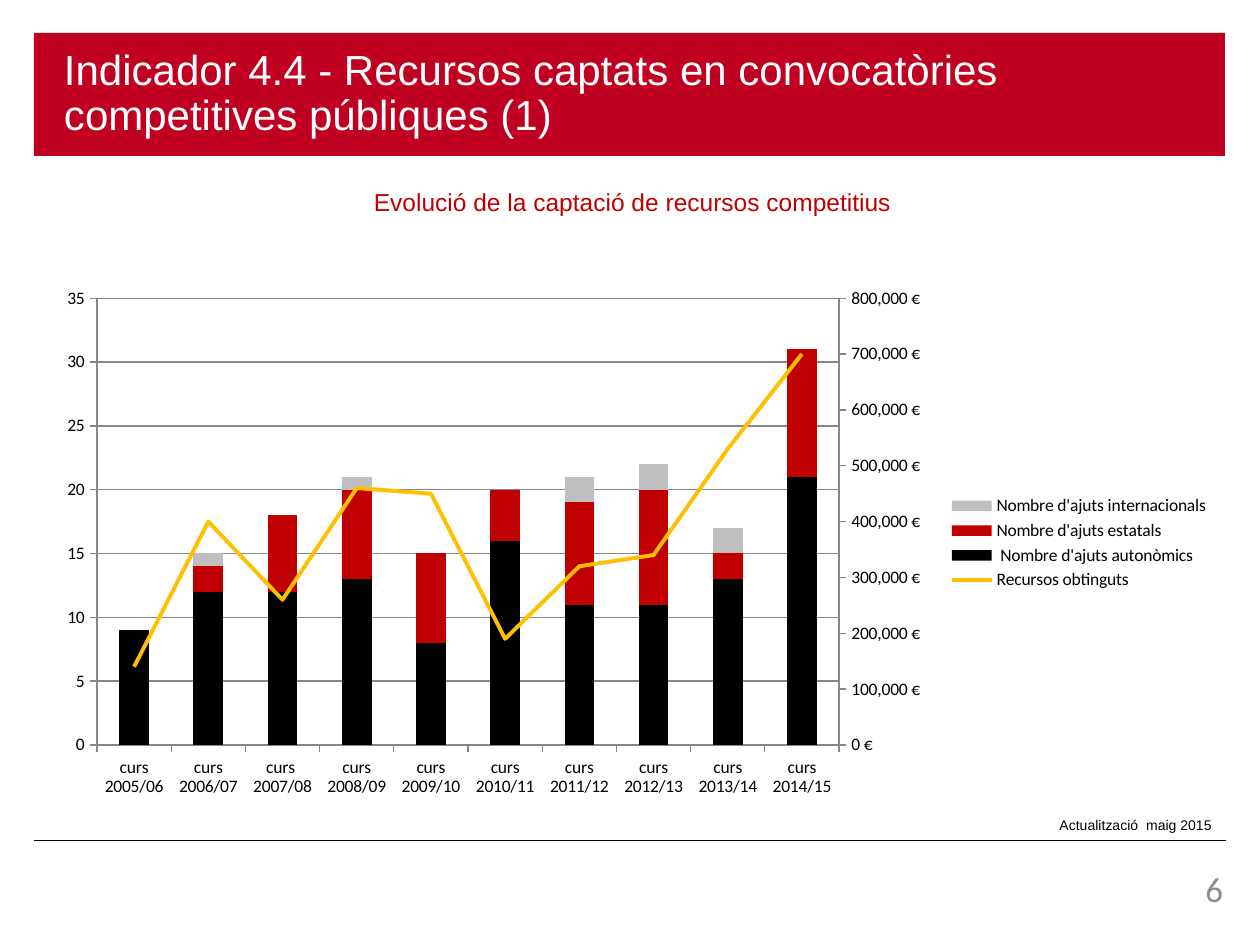
from dataclasses import dataclass

from lxml import etree
from pptx import Presentation
from pptx import util as u
from pptx.chart.data import CategoryChartData
from pptx.dml.color import RGBColor
from pptx.enum import chart as charts, shapes, text
from pptx.oxml import parse_xml
from pptx.oxml.ns import nsdecls, qn

PX = 914400 / 126


@dataclass(frozen=True)
class Theme:
    banner: str = "C00021"
    accent: str = "C00000"
    ink: str = "000000"
    paper: str = "FFFFFF"
    muted: str = "8C8C8C"
    pale: str = "BFBFBF"
    gold: str = "FFC000"
    grid: str = "868686"
    body_font: str = "Arial"
    chart_font: str = "Calibri"
    title_size: int = 24
    subtitle_size: int = 14
    chart_size: int = 10
    note_size: int = 8
    number_size: int = 20


THEME = Theme()

COURSES = ["curs 2005/06", "curs 2006/07", "curs  2007/08", "curs 2008/09", "curs 2009/10",
           "curs 2010/11", "curs 2011/12", "curs 2012/13", "curs 2013/14", "curs 2014/15"]
GRANTS = [
    (" Nombre d'ajuts autonòmics", [9, 12, 12, 13, 8, 16, 11, 11, 13, 21], THEME.ink),
    ("Nombre d'ajuts estatals", [None, 2, 6, 7, 7, 4, 8, 9, 2, 10], THEME.accent),
    ("Nombre d'ajuts internacionals", [None, 1, 0, 1, 0, 0, 2, 2, 2, 0], THEME.pale),
]
FUNDS = ("Recursos obtinguts", [140000, 400000, 260000, 460000, 450000,
                                190000, 320000, 340000, 530000, 700000])

FUNDS_AXES = f"""
<c:plotArea {nsdecls("c", "a")}>
  <c:lineChart>
    <c:grouping val="standard"/><c:varyColors val="0"/>
    <c:marker val="1"/><c:axId val="5001"/><c:axId val="5002"/>
  </c:lineChart>
  <c:valAx>
    <c:axId val="5002"/>
    <c:scaling><c:orientation val="minMax"/><c:max val="800000"/><c:min val="0"/></c:scaling>
    <c:delete val="0"/><c:axPos val="r"/>
    <c:numFmt formatCode="#,##0\\ &quot;€&quot;" sourceLinked="0"/>
    <c:majorTickMark val="out"/><c:minorTickMark val="none"/><c:tickLblPos val="nextTo"/>
    <c:spPr><a:ln w="9525"><a:solidFill><a:srgbClr val="{THEME.grid}"/></a:solidFill></a:ln></c:spPr>
    <c:crossAx val="5001"/><c:crosses val="max"/><c:crossBetween val="between"/>
    <c:majorUnit val="100000"/>
  </c:valAx>
  <c:catAx>
    <c:axId val="5001"/>
    <c:scaling><c:orientation val="minMax"/></c:scaling>
    <c:delete val="1"/><c:axPos val="b"/>
    <c:majorTickMark val="none"/><c:minorTickMark val="none"/><c:tickLblPos val="nextTo"/>
    <c:crossAx val="5002"/><c:crosses val="autoZero"/>
  </c:catAx>
</c:plotArea>"""


def px(*lengths):
    return [u.Emu(round(length * PX)) for length in lengths]


def color(code):
    return RGBColor.from_string(code)


def write(frame, words, *, size, ink, font=THEME.body_font,
          align=text.PP_ALIGN.LEFT, anchor=text.MSO_ANCHOR.TOP,
          insets=(13, 6, 13, 6), spacing=None):
    """Fill a text frame with one formatted paragraph; insets run left, top, right, bottom."""
    frame.word_wrap = True
    frame.auto_size = text.MSO_AUTO_SIZE.NONE
    frame.vertical_anchor = anchor
    (frame.margin_left, frame.margin_top,
     frame.margin_right, frame.margin_bottom) = px(*insets)
    para = frame.paragraphs[0]
    para.alignment = align
    para.line_spacing = spacing
    span = para.add_run()
    span.text = words
    span.font.name = font
    span.font.size = u.Pt(size)
    span.font.color.rgb = color(ink)


def add_title(page, words, area):
    title = page.shapes.title
    title.left, title.top, title.width, title.height = px(*area)
    title.fill.solid()
    title.fill.fore_color.rgb = color(THEME.banner)
    write(title.text_frame, words, size=THEME.title_size, ink=THEME.paper,
          anchor=text.MSO_ANCHOR.MIDDLE, insets=(30, 6, 13, 6), spacing=0.9)


def add_text(page, words, area, **style):
    write(page.shapes.add_textbox(*px(*area)).text_frame, words, **style)


def add_rule(page, left, right, y):
    rule = page.shapes.add_connector(shapes.MSO_CONNECTOR.STRAIGHT, *px(left, y, right, y))
    rule.line.color.rgb = color(THEME.ink)
    rule.line.width = u.Pt(0.5)
    etree.SubElement(rule._element.spPr, qn("a:effectLst"))


def move_last_series_to_line(chart):
    """Draw the last column series as a line on a right-hand axis."""
    plot_area = chart._chartSpace.chart.plotArea
    columns = plot_area.find(qn("c:barChart"))
    line, *axes = list(parse_xml(FUNDS_AXES))
    series = columns.findall(qn("c:ser"))[-1]
    for bar_only in series.findall(qn("c:invertIfNegative")):
        series.remove(bar_only)
    line.find(qn("c:varyColors")).addnext(series)
    columns.addnext(line)
    last_axis = plot_area.findall(qn("c:valAx"))[-1]
    for axis in reversed(axes):
        last_axis.addnext(axis)


def place_plot(chart, **shares):
    """Fix the inner plot area by its x, y, w and h shares of the chart."""
    plot_area = chart._chartSpace.chart.plotArea
    for old in plot_area.findall(qn("c:layout")):
        plot_area.remove(old)
    layout = etree.Element(qn("c:layout"))
    manual = etree.SubElement(layout, qn("c:manualLayout"))
    settings = {"layoutTarget": "inner", "xMode": "edge", "yMode": "edge", **shares}
    for tag, value in settings.items():
        etree.SubElement(manual, qn(f"c:{tag}")).set("val", str(value))
    plot_area.insert(0, layout)


def style_axes(chart):
    for axis in (chart.category_axis, chart.value_axis):
        axis.major_tick_mark = charts.XL_TICK_MARK.OUTSIDE
        axis.format.line.color.rgb = color(THEME.grid)
    scale = chart.value_axis
    scale.minimum_scale, scale.maximum_scale, scale.major_unit = 0, 35, 5
    scale.has_major_gridlines = True
    scale.major_gridlines.format.line.color.rgb = color(THEME.grid)


def add_funding_chart(page, area):
    data = CategoryChartData()
    data.categories = COURSES
    for name, values, _ in GRANTS:
        data.add_series(name, values)
    data.add_series(*FUNDS)
    chart = page.shapes.add_chart(
        charts.XL_CHART_TYPE.COLUMN_STACKED, *px(*area), data).chart
    chart.has_title = False
    chart.font.name = THEME.chart_font
    chart.font.size = u.Pt(THEME.chart_size)
    chart.font.color.rgb = color(THEME.ink)
    style_axes(chart)
    move_last_series_to_line(chart)
    place_plot(chart, x=0.045, y=0.04, w=0.63, h=0.84)

    columns, line = chart.plots
    columns.gap_width, columns.overlap = 150, 100
    columns.vary_by_categories = False
    for series, (_, _, fill) in zip(columns.series, GRANTS):
        series.format.fill.solid()
        series.format.fill.fore_color.rgb = color(fill)
    funds = line.series[0]
    funds.smooth = False
    funds.marker.style = charts.XL_MARKER_STYLE.NONE
    funds.format.line.color.rgb = color(THEME.gold)
    funds.format.line.width = u.Pt(2.25)

    chart.has_legend = True
    chart.legend.position = charts.XL_LEGEND_POSITION.RIGHT
    chart.legend.include_in_layout = False


def main():
    deck = Presentation()
    deck.slide_width, deck.slide_height = px(1260, 945)
    page = deck.slides.add_slide(deck.slide_layouts[5])
    add_rule(page, 34, 1226, 840)
    add_title(page, "Indicador 4.4 - Recursos captats en convocatòries "
                    "competitives públiques (1)", (34, 33, 1191, 123))
    add_text(page, "Evolució de la captació de recursos competitius ",
             (294, 181, 684, 43), size=THEME.subtitle_size, ink=THEME.accent,
             align=text.PP_ALIGN.CENTER)
    add_text(page, "Actualització  maig 2015", (1017, 810, 208, 30),
             size=THEME.note_size, ink=THEME.ink, align=text.PP_ALIGN.RIGHT)
    add_text(page, "6", (1131, 868, 92, 50), size=THEME.number_size, ink=THEME.muted,
             font=THEME.chart_font, align=text.PP_ALIGN.RIGHT, insets=(0, 0, 0, 0))
    add_funding_chart(page, (44, 277, 1178, 532))
    deck.save("out.pptx")


if __name__ == "__main__":
    main()
